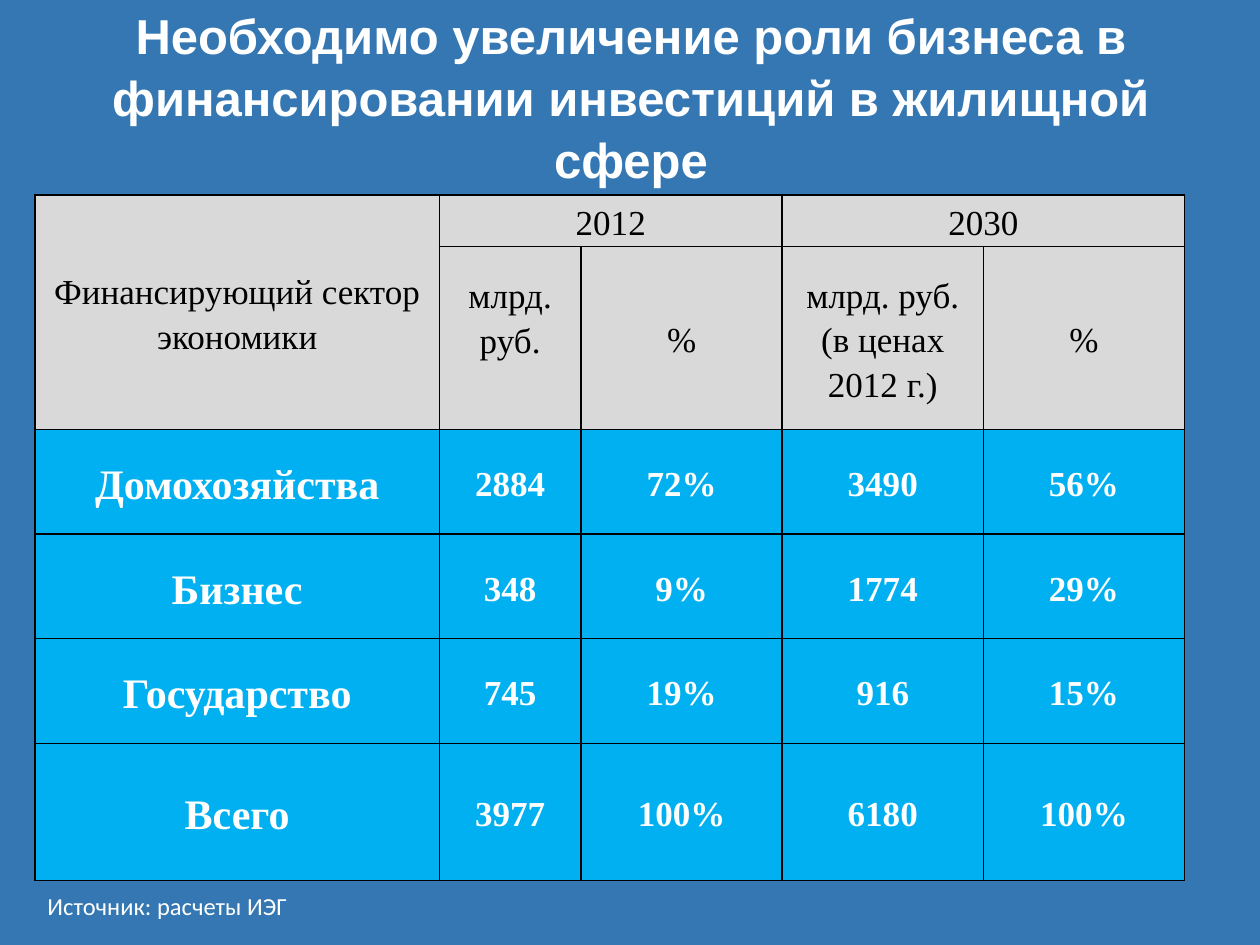
from pptx import Presentation
from pptx.dml.color import RGBColor
from pptx.enum.text import MSO_ANCHOR, MSO_AUTO_SIZE, PP_ALIGN
from pptx.oxml import parse_xml
from pptx.oxml.ns import nsdecls
from pptx.util import Pt

HUES = {"back": "3477B2", "head": "D9D9D9", "body": "00B0F0",
        "line": "000000", "dark": "000000", "light": "FFFFFF"}
COLS = [231, 81, 115, 115, 115]
ROWS = [29.5, 104.4, 59.8, 59.8, 59.8, 78.5]
DATA = [
    ["Финансирующий сектор экономики", "2012", "", "2030", ""],
    ["", "млрд. руб.", "%", "млрд. руб.\n(в ценах 2012 г.)", "%"],
    ["Домохозяйства", "2884", "72%", "3490", "56%"],
    ["Бизнес", "348", "9%", "1774", "29%"],
    ["Государство", "745", "19%", "916", "15%"],
    ["Всего", "3977", "100%", "6180", "100%"],
]
SPANS = [(0, 0, 1, 0), (0, 1, 0, 2), (0, 3, 0, 4)]


def tint(name):
    return RGBColor.from_string(HUES[name])


class Page:
    def __init__(self, deck):
        self.slide = deck.slides.add_slide(deck.slide_layouts[5])
        fill = self.slide.background.fill
        fill.solid()
        fill.fore_color.rgb = tint("back")

    def style(self, frame, face, size, hue, bold=False, align=None, space=None):
        for para in frame.paragraphs:
            para.alignment = align
            para.line_spacing = space
            font = para.font
            font.name, font.size, font.bold = face, Pt(size), bold
            font.color.rgb = tint(hue)

    def title(self, text, x, y, w, h):
        shape = self.slide.shapes.title
        shape.left, shape.top, shape.width, shape.height = map(Pt, (x, y, w, h))
        frame = shape.text_frame
        frame.text = text
        frame.auto_size = MSO_AUTO_SIZE.NONE
        frame.vertical_anchor = MSO_ANCHOR.MIDDLE
        self.style(frame, "Arial", 28, "light", True, PP_ALIGN.CENTER, 1.05)

    def note(self, text, x, y, w, h):
        frame = self.slide.shapes.add_textbox(*map(Pt, (x, y, w, h))).text_frame
        frame.word_wrap = True
        frame.text = text
        self.style(frame, "Calibri", 14, "light")

    def edge(self, cell):
        props = cell._tc.get_or_add_tcPr()
        for side in "LRTB":
            props.append(parse_xml(
                f'<a:ln{side} {nsdecls("a")} w="{Pt(1)}"><a:solidFill>'
                f'<a:srgbClr val="{HUES["line"]}"/></a:solidFill></a:ln{side}>'))

    def cell(self, cell, text, head, size):
        self.edge(cell)
        cell.fill.solid()
        cell.fill.fore_color.rgb = tint("head" if head else "body")
        cell.margin_left = cell.margin_right = Pt(2)
        cell.margin_top = cell.margin_bottom = Pt(0)
        cell.vertical_anchor = MSO_ANCHOR.MIDDLE
        cell.text_frame.text = text
        self.style(cell.text_frame, "Times New Roman", size,
                   "dark" if head else "light", not head, PP_ALIGN.CENTER, 1.15)

    def table(self, x, y):
        area = map(Pt, (x, y, sum(COLS), sum(ROWS)))
        grid = self.slide.shapes.add_table(len(ROWS), len(COLS), *area).table
        grid.first_row = grid.horz_banding = False
        for col, width in zip(grid.columns, COLS):
            col.width = Pt(width)
        for r, (row, high) in enumerate(zip(grid.rows, ROWS)):
            row.height = Pt(high)
            head = r < 2
            for c, text in enumerate(DATA[r]):
                size = 24 if c == 0 and not head else 20
                self.cell(grid.cell(r, c), text, head, size)
        for top, left, low, right in SPANS:
            grid.cell(top, left).merge(grid.cell(low, right))
        grid.cell(1, 1).margin_bottom = Pt(25)


def main():
    deck = Presentation()
    deck.slide_width, deck.slide_height = Pt(720), Pt(540)
    page = Page(deck)
    page.title("Необходимо увеличение роли бизнеса в финансировании "
               "инвестиций в жилищной сфере", 36.5, 9.5, 648, 90)
    page.table(20, 111.5)
    page.note("Источник: расчеты ИЭГ", 20, 505.5, 527, 24.5)
    deck.save("out.pptx")


if __name__ == "__main__":
    main()
